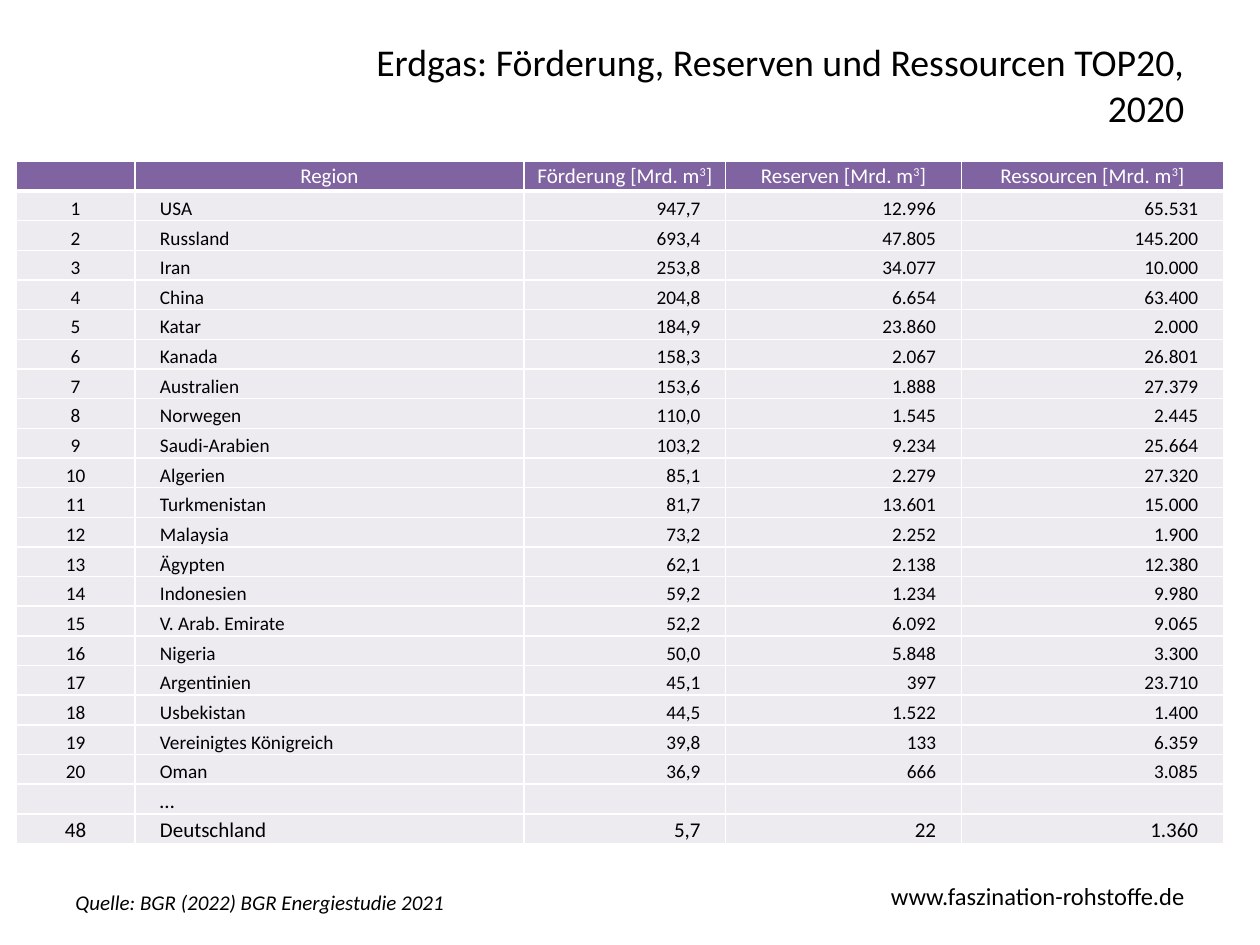
from lxml import etree
from pptx import Presentation
from pptx.dml.color import RGBColor
from pptx.enum import text
from pptx.oxml.ns import qn
from pptx.util import Inches, Pt

BLACK = RGBColor(0x00, 0x00, 0x00)
WHITE = RGBColor(0xFF, 0xFF, 0xFF)
PURPLE = RGBColor(0x80, 0x64, 0xA2)
LILAC = RGBColor(0xED, 0xEA, 0xF0)
FONT = "Calibri"
LEFT, CENTER, RIGHT = text.PP_ALIGN.LEFT, text.PP_ALIGN.CENTER, text.PP_ALIGN.RIGHT
MIDDLE, BOTTOM = text.MSO_ANCHOR.MIDDLE, text.MSO_ANCHOR.BOTTOM

COLUMN_WIDTHS = (0.94, 3.09, 1.6, 1.87, 2.08)
COLUMN_ALIGNS = (CENTER, LEFT, RIGHT, RIGHT, RIGHT)
QUANTITIES = ("Förderung", "Reserven", "Ressourcen")
COUNTRIES = (
    ("1", "USA", "947,7", "12.996", "65.531"),
    ("2", "Russland", "693,4", "47.805", "145.200"),
    ("3", "Iran", "253,8", "34.077", "10.000"),
    ("4", "China", "204,8", "6.654", "63.400"),
    ("5", "Katar", "184,9", "23.860", "2.000"),
    ("6", "Kanada", "158,3", "2.067", "26.801"),
    ("7", "Australien", "153,6", "1.888", "27.379"),
    ("8", "Norwegen", "110,0", "1.545", "2.445"),
    ("9", "Saudi-Arabien", "103,2", "9.234", "25.664"),
    ("10", "Algerien", "85,1", "2.279", "27.320"),
    ("11", "Turkmenistan", "81,7", "13.601", "15.000"),
    ("12", "Malaysia", "73,2", "2.252", "1.900"),
    ("13", "Ägypten", "62,1", "2.138", "12.380"),
    ("14", "Indonesien", "59,2", "1.234", "9.980"),
    ("15", "V. Arab. Emirate", "52,2", "6.092", "9.065"),
    ("16", "Nigeria", "50,0", "5.848", "3.300"),
    ("17", "Argentinien", "45,1", "397", "23.710"),
    ("18", "Usbekistan", "44,5", "1.522", "1.400"),
    ("19", "Vereinigtes Königreich", "39,8", "133", "6.359"),
    ("20", "Oman", "36,9", "666", "3.085"),
    ("", "…", "", "", ""),
    ("48", "Deutschland", "5,7", "22", "1.360"),
)


def format_paragraph(p, size, color=BLACK, align=LEFT, italic=False):
    p.alignment = align
    p.font.name, p.font.size = FONT, Pt(size)
    p.font.color.rgb = color
    p.font.bold, p.font.italic = False, italic


def place_title(s, left, top, width, height):
    title = s.shapes.title
    title.left, title.top, title.width, title.height = left, top, width, height
    tf = title.text_frame
    tf.text = "Erdgas: Förderung, Reserven und Ressourcen TOP20, 2020"
    tf.word_wrap, tf.vertical_anchor = True, MIDDLE
    format_paragraph(tf.paragraphs[0], 21.6, align=RIGHT)


def add_footer_text(s, words, left, top, width, height, size, **style):
    tf = s.shapes.add_textbox(left, top, width, height).text_frame
    tf.word_wrap = True
    tf.text = words
    format_paragraph(tf.paragraphs[0], size, **style)


def draw_borders(cell, bottom=1):
    tcPr = cell._tc.get_or_add_tcPr()
    for side, width in (("L", 1), ("R", 1), ("T", 1), ("B", bottom)):
        line = etree.SubElement(tcPr, qn(f"a:ln{side}"), w=str(Pt(width)))
        fill = etree.SubElement(line, qn("a:solidFill"))
        etree.SubElement(fill, qn("a:srgbClr"), val=str(WHITE))


def format_cell(cell, size, fill, color, align, anchor, margin, bottom=1):
    draw_borders(cell, bottom)
    cell.fill.solid()
    cell.fill.fore_color.rgb = fill
    cell.vertical_anchor = anchor
    cell.margin_left = cell.margin_right = Inches(margin)
    cell.margin_top = cell.margin_bottom = 0
    p = cell.text_frame.paragraphs[0]
    format_paragraph(p, size, color, align)
    if not p.runs:  # keeps an empty cell from stretching its row
        etree.SubElement(p._p, qn("a:endParaRPr"), sz=str(size * 100))


def fill_header(cells):
    cells[1].text = "Region"
    for cell, quantity in zip(cells[2:], QUANTITIES):
        p = cell.text_frame.paragraphs[0]
        for part in (f"{quantity} [Mrd. m", "3", "]"):
            r = p.add_run()
            r.text = part
            if part == "3":
                r._r.get_or_add_rPr().set("baseline", "30000")
    for cell in cells:
        format_cell(cell, 12, PURPLE, WHITE, CENTER, MIDDLE, 0.08, bottom=3)


def add_gas_table(s, left, top, width, height):
    row_count = len(COUNTRIES) + 1
    table = s.shapes.add_table(row_count, len(COLUMN_WIDTHS), left, top, width, height).table
    table.first_row = table.horz_banding = False
    for column, column_width in zip(table.columns, COLUMN_WIDTHS):
        column.width = Inches(column_width)
    for row in table.rows:
        row.height = height // row_count

    fill_header(list(table.rows[0].cells))
    for i, country in enumerate(COUNTRIES, 1):
        size = 11 if i <= 20 else 12
        for cell, words, align in zip(table.rows[i].cells, country, COLUMN_ALIGNS):
            cell.text = words
            margin = 0 if align == CENTER else 0.2
            format_cell(cell, size, LILAC, BLACK, align, BOTTOM, margin)


def main():
    prs = Presentation()
    prs.slide_width, prs.slide_height = Inches(10), Inches(7.5)
    s = prs.slides.add_slide(prs.slide_layouts[5])
    add_footer_text(s, "www.faszination-rohstoffe.de", Inches(6.23), Inches(6.94),
                    Inches(3.27), Inches(0.34), 14, align=RIGHT)
    place_title(s, Inches(2.26), Inches(0.37), Inches(7.24), Inches(0.6))
    add_footer_text(s, "Quelle: BGR (2022) BGR Energiestudie 2021", Inches(0.5),
                    Inches(7.01), Inches(6.43), Inches(0.3), 12, italic=True)
    add_gas_table(s, Inches(0.13), Inches(1.28), Inches(9.58), Inches(5.42))
    prs.save("out.pptx")


if __name__ == "__main__":
    main()
